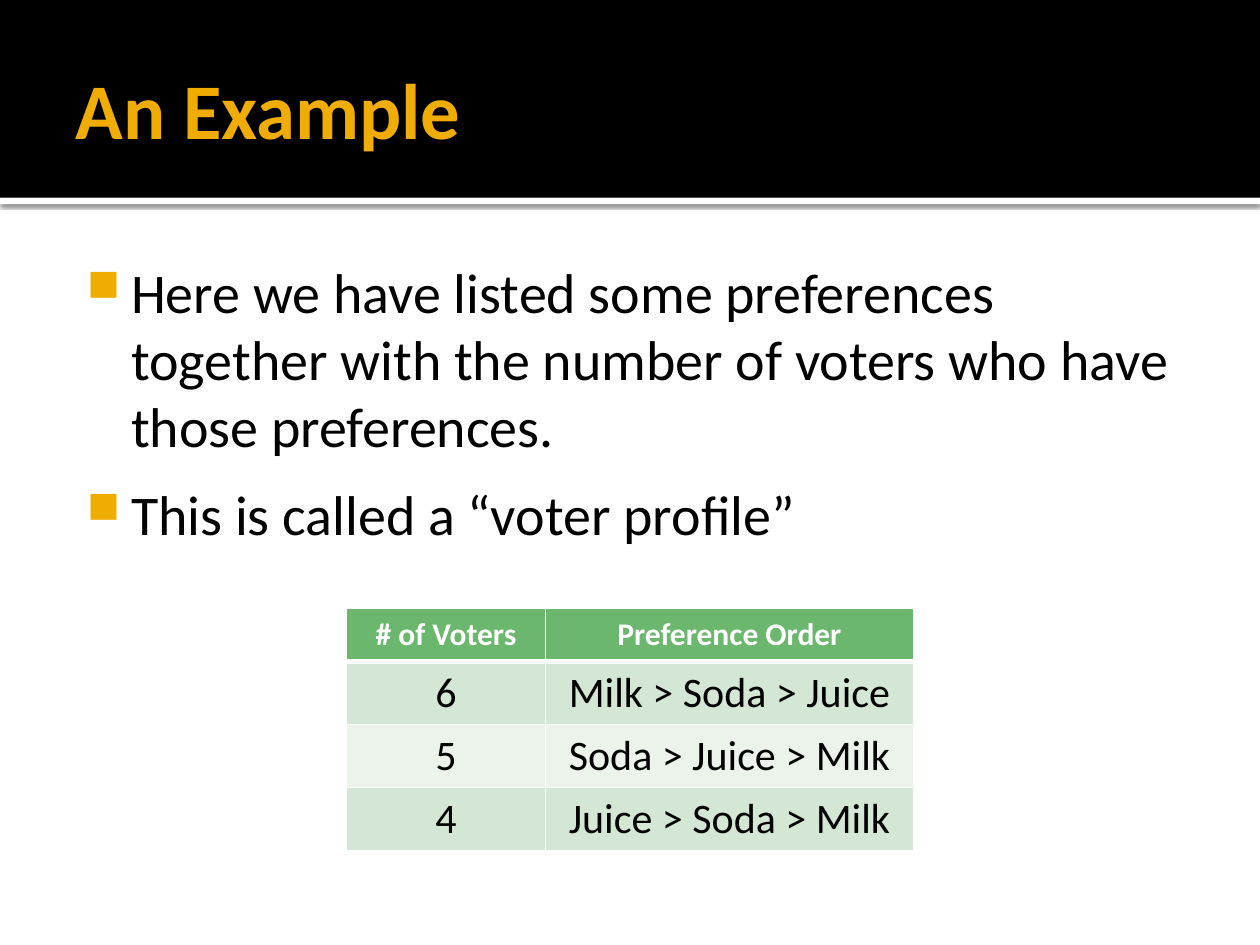
from dataclasses import dataclass

from lxml import etree
from pptx import Presentation
from pptx import util as u
from pptx.dml import color
from pptx.enum import shapes, text
from pptx.oxml import ns


@dataclass(frozen=True)
class Theme:
    """Colours, font and type sizes of the slide."""
    font: str = "Calibri"
    black: str = "000000"
    white: str = "FFFFFF"
    gold: str = "F0AD00"
    green: str = "6BB76D"
    bands: tuple = ("D4E6D4", "EBF3EB")
    title: int = 45
    body: int = 32
    header: int = 18
    cell: int = 24


THEME = Theme()


def inches(values):
    """Turn numbers into lengths."""
    return [u.Inches(value) for value in values]


def add_xml(parent, tag, **attributes):
    """Append a drawing element and return it."""
    return etree.SubElement(parent, ns.qn(tag), attributes)


def write(para, words, size, tint, bold=False):
    """Set a paragraph's text and format its runs."""
    para.text = words
    for span in para.runs:
        span.font.name = THEME.font
        span.font.size = u.Pt(size)
        span.font.bold = bold
        span.font.color.rgb = color.RGBColor.from_string(tint)


def add_bar(page, box, tint):
    """Place a plain filled rectangle."""
    bar = page.shapes.add_shape(shapes.MSO_SHAPE.RECTANGLE, *inches(box))
    bar.shadow.inherit = False
    bar.fill.solid()
    bar.fill.fore_color.rgb = color.RGBColor.from_string(tint)
    bar.line.fill.background()
    return bar


def add_text_frame(page, box, insets):
    """Place a wrapping text box and return its frame."""
    frame = page.shapes.add_textbox(*inches(box)).text_frame
    frame.word_wrap = True
    (frame.margin_left, frame.margin_top,
     frame.margin_right, frame.margin_bottom) = inches(insets)
    return frame


def add_banner(page, box, title):
    """Draw the title band with its shadowed white rule."""
    left, top, width, height = box
    rule = add_bar(page, (left, top + height, width, 0.05), THEME.white)
    effects = rule.element.spPr.find(ns.qn("a:effectLst"))
    shadow = add_xml(effects, "a:outerShdw", blurRad=str(u.Pt(2.5)),
                     dist=str(u.Pt(0.8)), dir="5400000", rotWithShape="0")
    add_xml(add_xml(shadow, "a:srgbClr", val=THEME.black), "a:alpha", val="60000")
    add_bar(page, box, THEME.black)
    frame = add_text_frame(page, (left + 0.5, top + 0.17, width - 1, 1.37),
                           (0.1, 0.05, 0.05, 0.05))
    frame.vertical_anchor = text.MSO_ANCHOR.MIDDLE
    write(frame.paragraphs[0], title, THEME.title, THEME.gold, True)


def add_bullets(page, box, items):
    """Place a list with square gold bullets."""
    frame = add_text_frame(page, box, (0.06, 0.1, 0.1, 0.05))
    frame.text = "\n".join(items)
    for para, words in zip(frame.paragraphs, items):
        write(para, words, THEME.body, THEME.black)
        para.space_after = u.Pt(12)
        settings = para._p.get_or_add_pPr()
        settings.set("marL", str(u.Inches(0.48)))
        settings.set("indent", str(u.Inches(-0.35)))
        add_xml(add_xml(settings, "a:buClr"), "a:srgbClr", val=THEME.gold)
        add_xml(settings, "a:buSzPct", val="80000")
        add_xml(settings, "a:buChar", char="■")


def style_cell(cell, fill, bottom):
    """Fill a cell and give it white borders."""
    settings = cell._tc.get_or_add_tcPr()
    for side, points in (("L", 1), ("R", 1), ("T", 1), ("B", bottom)):
        line = add_xml(settings, f"a:ln{side}", w=str(u.Pt(points)))
        add_xml(add_xml(line, "a:solidFill"), "a:srgbClr", val=THEME.white)
    cell.fill.solid()
    cell.fill.fore_color.rgb = color.RGBColor.from_string(fill)
    cell.vertical_anchor = text.MSO_ANCHOR.MIDDLE


def add_profile(page, box, rows, widths, heights):
    """Place the voter table with a green header and banded rows."""
    table = page.shapes.add_table(len(rows), len(widths), *inches(box)).table
    for column, width in zip(table.columns, inches(widths)):
        column.width = width
    for row, height in zip(table.rows, inches(heights)):
        row.height = height
    for index, values in enumerate(rows):
        header = index == 0
        fill = THEME.green if header else THEME.bands[(index - 1) % 2]
        size = THEME.header if header else THEME.cell
        tint = THEME.white if header else THEME.black
        for cell, words in zip(table.rows[index].cells, values):
            style_cell(cell, fill, 3 if header else 1)
            para = cell.text_frame.paragraphs[0]
            write(para, words, size, tint, header)
            para.alignment = text.PP_ALIGN.CENTER


def main():
    """Build and save the slide."""
    deck = Presentation()
    deck.slide_width, deck.slide_height = inches((10, 7.5))
    page = deck.slides.add_slide(deck.slide_layouts[6])
    add_banner(page, (0, 0, 10, 1.57), "An Example")
    add_bullets(page, (0.5, 1.94, 8.92, 2.98), [
        "Here we have listed some preferences together with the number "
        "of voters who have those preferences.",
        "This is called a “voter profile”",
    ])
    add_profile(page, (2.75, 4.83, 4.5, 1.92), [
        ("# of Voters", "Preference Order"),
        ("6", "Milk > Soda > Juice"),
        ("5", "Soda > Juice > Milk"),
        ("4", "Juice > Soda > Milk"),
    ], (1.58, 2.92), (0.42, 0.48, 0.48, 0.48))
    deck.save("out.pptx")


if __name__ == "__main__":
    main()
